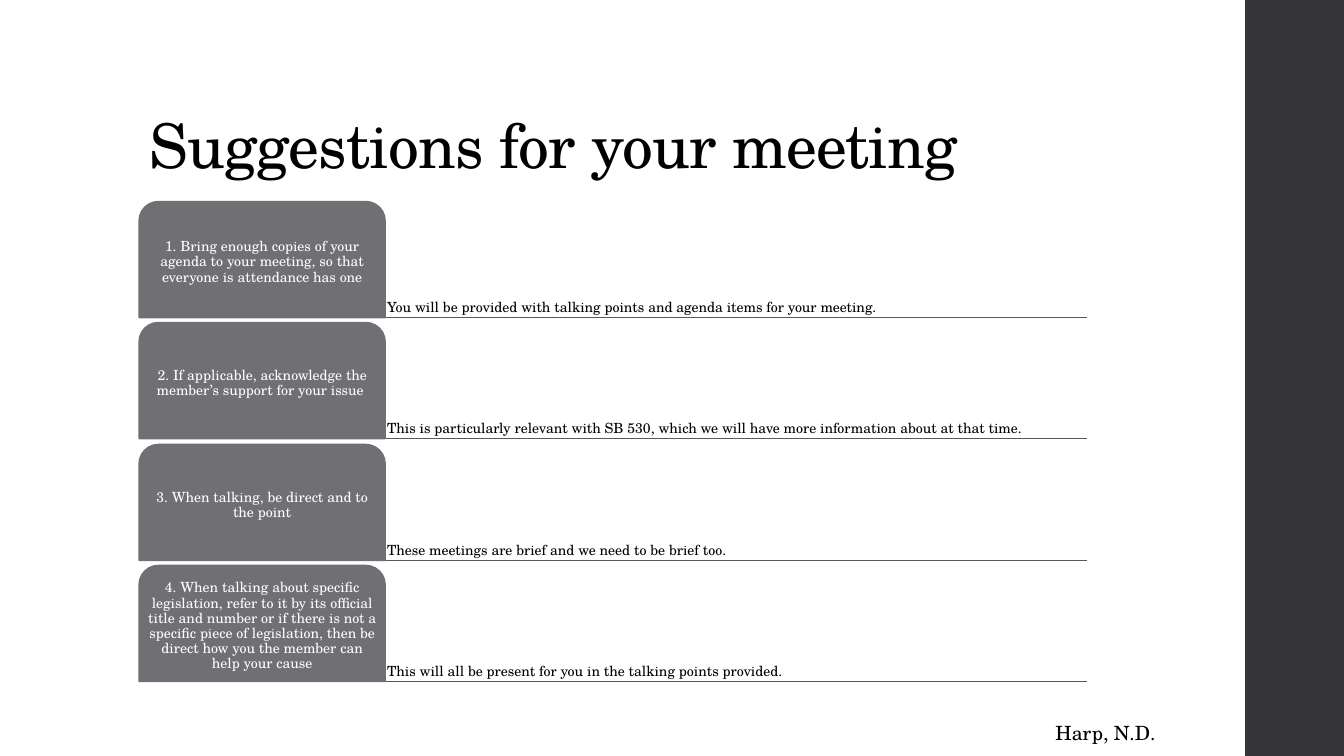
"""Build the slide of suggestions for a meeting."""
import dataclasses
import typing

import pptx
import pptx.dml.color
import pptx.enum.shapes
import pptx.enum.text
import pptx.oxml
import pptx.oxml.ns
import pptx.util

EMU_PER_PX = 9144
FONT = "TeX Gyre Schola"
BLACK, WHITE, TAB_GREY, RULE_GREY, BAR_GREY = "000000", "FFFFFF", "6F6F74", "59595D", "353537"
LEFT, TOP, PITCH = 138, 200, 120.4
TAB_WIDTH, ROW_WIDTH, ROW_HEIGHT = 244, 940, 115
LINE_POINTS = 1.1
ALIGN = pptx.enum.text.PP_ALIGN
ANCHOR = pptx.enum.text.MSO_ANCHOR
PRESET = pptx.enum.shapes.MSO_SHAPE


@dataclasses.dataclass(frozen=True)
class Suggestion:
    advice: str
    detail: str


SUGGESTIONS = [
    Suggestion(
        "1. Bring enough copies of your agenda to your meeting, so that everyone is attendance has one",
        "You will be provided with talking points and agenda items for your meeting.",
    ),
    Suggestion(
        "2. If applicable, acknowledge the member’s support for your issue ",
        "This is particularly relevant with SB 530, which we will have more information about at that time.",
    ),
    Suggestion(
        "3. When talking, be direct and to the point",
        "These meetings are brief and we need to be brief too.",
    ),
    Suggestion(
        "4. When talking about specific legislation, refer to it by its official title and number "
        "or if there is not a specific piece of legislation, then be direct how you the member "
        "can help your cause",
        "This will all be present for you in the talking points provided.",
    ),
]


def px(*lengths: int) -> list[pptx.util.Emu]:
    return [pptx.util.Emu(length * EMU_PER_PX) for length in lengths]


def colour(value: str) -> pptx.dml.color.RGBColor:
    return pptx.dml.color.RGBColor.from_string(value)


def apply(target: typing.Any, values: dict[str, typing.Any]) -> None:
    for name, value in values.items():
        setattr(target, name, value)


def write(shape, text: str, size: int, hex_colour: str, frame_format: dict, para_format: dict):
    frame = shape.text_frame
    apply(frame, {"word_wrap": True, **frame_format})
    para = frame.paragraphs[0]
    apply(para, {"alignment": ALIGN.LEFT, **para_format})
    span = para.add_run()
    span.text = text
    apply(span.font, {"name": FONT, "size": pptx.util.Pt(size)})
    span.font.color.rgb = colour(hex_colour)
    return span


def add_block(page, preset, bounds: tuple[int, ...], fill: str):
    block = page.shapes.add_shape(preset, *px(*bounds))
    block.shadow.inherit = False
    block.fill.solid()
    block.fill.fore_color.rgb = colour(fill)
    block.line.fill.background()
    return block


def add_rule(page, y: int) -> None:
    rule = page.shapes.add_connector(
        pptx.enum.shapes.MSO_CONNECTOR.STRAIGHT, *px(LEFT, y, LEFT + ROW_WIDTH, y)
    )
    rule.line.color.rgb = colour(RULE_GREY)
    rule.line.width = pptx.util.Pt(LINE_POINTS)
    properties = rule._element.find(pptx.oxml.ns.qn("p:spPr"))
    properties.append(
        pptx.oxml.parse_xml(f"<a:effectLst {pptx.oxml.ns.nsdecls('a')}/>")
    )


def add_suggestion(page, suggestion: Suggestion, top: int) -> None:
    margins = dict.fromkeys(
        ("margin_left", "margin_top", "margin_right", "margin_bottom"), px(2)[0]
    )
    spacing = {"line_spacing": 0.9, "space_after": pptx.util.Pt(3.5)}
    add_rule(page, top + ROW_HEIGHT)
    detail = page.shapes.add_textbox(
        *px(LEFT + TAB_WIDTH, top, ROW_WIDTH - TAB_WIDTH, ROW_HEIGHT)
    )
    write(detail, suggestion.detail, 10, BLACK,
          {**margins, "vertical_anchor": ANCHOR.BOTTOM}, spacing)
    tab = add_block(page, PRESET.ROUND_2_SAME_RECTANGLE, (LEFT, top, TAB_WIDTH, ROW_HEIGHT), TAB_GREY)
    tab.line.color.rgb = colour(TAB_GREY)
    tab.line.width = pptx.util.Pt(LINE_POINTS)
    write(tab, suggestion.advice, 10, WHITE,
          {**margins, "vertical_anchor": ANCHOR.MIDDLE}, {**spacing, "alignment": ALIGN.CENTER})


def main() -> None:
    deck = pptx.Presentation()
    deck.slide_width, deck.slide_height = px(1333, 750)
    page = deck.slides.add_slide(deck.slide_layouts[5])

    add_block(page, PRESET.RECTANGLE, (1235, 0, 100, 750), BAR_GREY)

    title = page.shapes.title
    apply(title, dict(zip(("left", "top", "width", "height"), px(138, 40, 1060, 145))))
    heading = write(title, "Suggestions for your meeting", 44, BLACK,
                    {"vertical_anchor": ANCHOR.BOTTOM, "auto_size": pptx.enum.text.MSO_AUTO_SIZE.NONE},
                    {"line_spacing": 0.9, "space_before": pptx.util.Pt(0)})
    heading._r.get_or_add_rPr().set("spc", "-50")

    for index, suggestion in enumerate(SUGGESTIONS):
        add_suggestion(page, suggestion, TOP + round(index * PITCH))

    citation = page.shapes.add_textbox(*px(1037, 710, 211, 34))
    write(citation, "Harp, N.D.", 14, BLACK,
          {"auto_size": pptx.enum.text.MSO_AUTO_SIZE.SHAPE_TO_FIT_TEXT}, {})

    deck.save("out.pptx")


if __name__ == "__main__":
    main()
